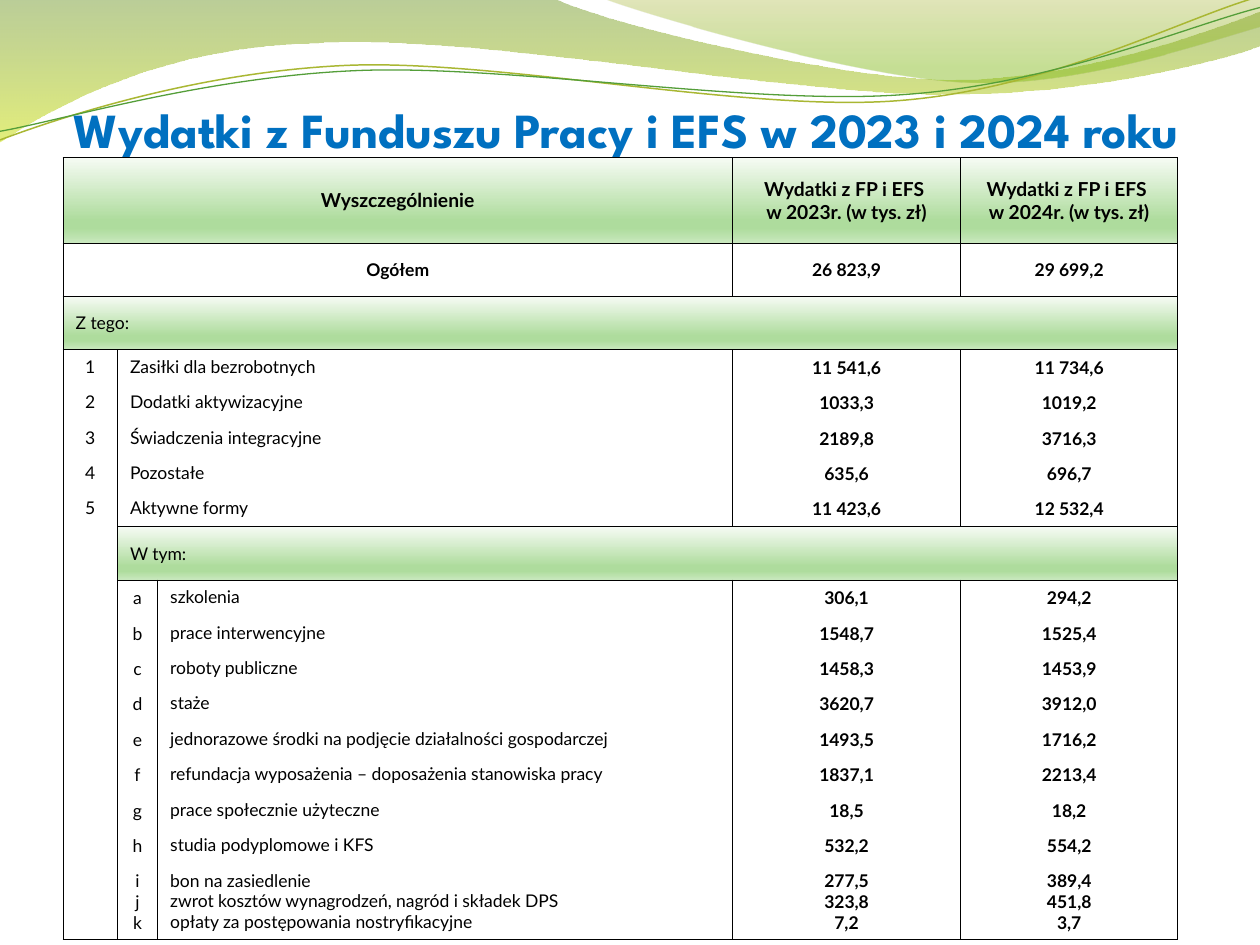
import pptx
import pptx.dml.color
import pptx.enum.text
import pptx.oxml.ns
import pptx.util
from lxml import etree

Pt = pptx.util.Pt
qn = pptx.oxml.ns.qn
ALIGN = pptx.enum.text.PP_ALIGN
ANCHOR = pptx.enum.text.MSO_ANCHOR

COLORS = {
    "title": "0070C0", "text": "000000", "border": "000000",
    "olive": "69921C", "lime": "CCE10F", "moss": "9BAA1A", "leaf": "81BA16",
    "yellow_line": "A9B733", "green_line": "549E39",
    "pale": "F6FBF4", "mid": "AEDC9D", "soft": "C9E8BE",
}
BANNER = [(0, "pale", 100), (74, "mid", 100), (83, "mid", 100), (100, "soft", 100)]
NO_GRID_STYLE = "{2D5ABB26-0587-4C30-8999-92F81FD0307C}"

WAVES = [
    ([(0, "olive", 45), (100, "lime", 55)], [
        [(0, 0)], [(316.8, -0.7)],
        [(342, 12.2), (477.4, 45.4), (545.8, 45.4)],
        [(614.2, 45.4), (689.8, 18.7), (720, 6.5)],
        [(720.7, 25.9)],
        [(707.8, 31.7), (625.7, 54.7), (537.1, 54)],
        [(447.8, 54), (274.3, 20.2), (185, 24.5)],
        [(92.9, 25.9), (33.1, 59.8), (-0.7, 81.4)]]),
    ([(0, "moss", 30), (80, "leaf", 45)], [
        [(344.9, -0.7)],
        [(366.5, 7.9), (491, 44.6), (553, 46.8)],
        [(615.6, 49.7), (691.9, 23), (720, 15.1)],
        [(720, 0)]]),
]
STRAND_ROTATION = 357.3
STRANDS = [
    ("yellow_line", 0.85, [
        [(-1.4, 63)],
        [(33.8, 51.7), (113.3, 29.4), (199.1, 29.8)],
        [(284.9, 30.3), (425, 67.3), (511.6, 64.8)],
        [(599, 62.4), (676.4, 25.7), (719.4, 15.5)]]),
    ("green_line", 0.75, [
        [(-1.1, 58)],
        [(32.9, 53.8), (117.6, 32.5), (204.1, 33)],
        [(289.8, 33.4), (428.9, 63.8), (515.5, 61.4)],
        [(601.3, 59.6), (678.4, 30.1), (721.4, 21.3)]]),
]

COLUMN_WIDTHS = [31.1, 23, 328.5, 130.4, 124]
ROW_HEIGHTS = [48.9] + [30.5] * 2 + [20.25] * 5 + [30.5] + [20.25] * 8 + [43]
MAIN_ITEMS = [
    ("1", "Zasiłki dla bezrobotnych", "11 541,6", "11 734,6"),
    ("2", "Dodatki aktywizacyjne", "1033,3", "1019,2"),
    ("3", "Świadczenia integracyjne", "2189,8", "3716,3"),
    ("4", "Pozostałe", "635,6", "696,7"),
    ("5", "Aktywne formy", "11 423,6", "12 532,4"),
]
ACTIVE_ITEMS = [
    ("a", "szkolenia", "306,1", "294,2"),
    ("b", "prace interwencyjne", "1548,7", "1525,4"),
    ("c", "roboty publiczne", "1458,3", "1453,9"),
    ("d", "staże", "3620,7", "3912,0"),
    ("e", "jednorazowe środki na podjęcie działalności gospodarczej", "1493,5", "1716,2"),
    ("f", "refundacja wyposażenia – doposażenia stanowiska pracy", "1837,1", "2213,4"),
    ("g", "prace społecznie użyteczne", "18,5", "18,2"),
    ("h", "studia podyplomowe i KFS", "532,2", "554,2"),
    ("i\nj\nk",
     "bon na zasiedlenie\nzwrot kosztów wynagrodzeń, nagród i składek DPS\n"
     "opłaty za postępowania nostryfikacyjne",
     "277,5\n323,8\n7,2", "389,4\n451,8\n3,7"),
]


def rgb(name):
    return pptx.dml.color.RGBColor.from_string(COLORS[name])


def fill_gradient(fill, properties, stops):
    fill.background()
    gradient = etree.Element(qn("a:gradFill"), rotWithShape="1")
    stop_list = etree.SubElement(gradient, qn("a:gsLst"))
    for position, name, opacity in stops:
        stop = etree.SubElement(stop_list, qn("a:gs"), pos=str(position * 1000))
        color = etree.SubElement(stop, qn("a:srgbClr"), val=COLORS[name])
        if opacity < 100:
            etree.SubElement(color, qn("a:alpha"), val=str(opacity * 1000))
    etree.SubElement(gradient, qn("a:lin"), ang="5400000", scaled="0")
    properties.replace(properties.find(qn("a:noFill")), gradient)


def style_paragraph(paragraph, font_name, size, color, bold, align):
    paragraph.alignment = align
    paragraph.font.name = font_name
    paragraph.font.size = Pt(size)
    paragraph.font.bold = bold
    paragraph.font.color.rgb = rgb(color)


def add_outline(slide, left, top, segments, close):
    placed = [[(Pt(left + x), Pt(top + y)) for x, y in segment] for segment in segments]
    ends = [segment[-1] for segment in placed]
    builder = slide.shapes.build_freeform(*ends[0], scale=1.0)
    builder.add_line_segments(ends[1:], close=close)
    shape = builder.convert_to_shape()
    shape.shadow.inherit = False
    lines = list(shape._element.iter(qn("a:lnTo")))
    for line, segment in zip(lines, placed[1:]):
        if len(segment) == 3:
            curve = etree.Element(qn("a:cubicBezTo"))
            for x, y in segment:
                etree.SubElement(curve, qn("a:pt"), x=str(x - shape.left), y=str(y - shape.top))
            line.getparent().replace(line, curve)
    return shape


def add_waves(slide, left, top):
    for stops, segments in WAVES:
        shape = add_outline(slide, left, top, segments, True)
        fill_gradient(shape.fill, shape._element.spPr, stops)
        shape.line.fill.background()
    for color, width, segments in STRANDS:
        shape = add_outline(slide, left, top, segments, False)
        shape.rotation = STRAND_ROTATION
        shape.fill.background()
        shape.line.color.rgb = rgb(color)
        shape.line.width = Pt(width)


def add_title(slide, left, top, width, height):
    box = slide.shapes.add_textbox(Pt(left), Pt(top), Pt(width), Pt(height))
    frame = box.text_frame
    frame.word_wrap = True
    frame.vertical_anchor = ANCHOR.BOTTOM
    frame.margin_left = frame.margin_right = frame.margin_bottom = 0
    frame.text = "Wydatki z Funduszu Pracy i EFS w 2023 i 2024 roku"
    style_paragraph(frame.paragraphs[0], "League Spartan", 28, "title", True, ALIGN.CENTER)


def add_borders(cell, sides):
    properties = cell._tc.get_or_add_tcPr()
    for side in "LRTB":
        line = etree.SubElement(properties, qn("a:ln" + side), w=str(Pt(0.5)))
        if side in sides:
            solid = etree.SubElement(line, qn("a:solidFill"))
            etree.SubElement(solid, qn("a:srgbClr"), val=COLORS["border"])
        else:
            etree.SubElement(line, qn("a:noFill"))


def put(table, row, column, text, sides="LRTB", columns=1, rows=1, size=10,
        bold=False, align=ALIGN.CENTER, anchor=ANCHOR.MIDDLE, banner=False):
    cell = table.cell(row, column)
    if columns * rows > 1:
        cell.merge(table.cell(row + rows - 1, column + columns - 1))
    for i in range(row, row + rows):
        for j in range(column, column + columns):
            add_borders(table.cell(i, j), sides)
    if banner:
        fill_gradient(cell.fill, cell._tc.tcPr, BANNER)
    else:
        cell.fill.background()
    cell.vertical_anchor = anchor
    if text:
        cell.text = text
        for paragraph in cell.text_frame.paragraphs:
            style_paragraph(paragraph, "Lato", size, "text", bold, align)


def put_items(table, first_row, items, key_column, key_anchor):
    for index, (key, name, *amounts) in enumerate(items):
        row = first_row + index
        top = "T" if index == 0 else ""
        sides = "LR" + top + ("B" if index == len(items) - 1 else "")
        key_sides = "LR" + top if key_column == 0 else sides
        put(table, row, key_column, key, key_sides, anchor=key_anchor)
        put(table, row, key_column + 1, name, sides, columns=2 - key_column,
            align=ALIGN.LEFT, anchor=ANCHOR.TOP)
        for column, amount in enumerate(amounts, 3):
            put(table, row, column, amount, sides, bold=True)


def add_spending_table(slide, left, top):
    frame = slide.shapes.add_table(len(ROW_HEIGHTS), len(COLUMN_WIDTHS), Pt(left), Pt(top),
                                   Pt(sum(COLUMN_WIDTHS)), Pt(sum(ROW_HEIGHTS)))
    table = frame.table
    table.first_row = table.horz_banding = False
    table._tbl.tblPr.find(qn("a:tableStyleId")).text = NO_GRID_STYLE
    for column, width in zip(table.columns, COLUMN_WIDTHS):
        column.width = Pt(width)
    for row, height in zip(table.rows, ROW_HEIGHTS):
        row.height = Pt(height)

    put(table, 0, 0, "Wyszczególnienie", columns=3, size=11, bold=True, banner=True)
    put(table, 1, 0, "Ogółem", columns=3, bold=True)
    for column, year, total in ((3, 2023, "26 823,9"), (4, 2024, "29 699,2")):
        put(table, 0, column, f"Wydatki z FP i EFS \nw {year}r. (w tys. zł)",
            size=11, bold=True, banner=True)
        put(table, 1, column, total, bold=True)
    put(table, 2, 0, "Z tego:", columns=5, align=ALIGN.LEFT, banner=True)
    put_items(table, 3, MAIN_ITEMS, 0, ANCHOR.TOP)
    put(table, 8, 0, "", "LRB", rows=10)
    put(table, 8, 1, "W tym:", columns=4, align=ALIGN.LEFT, banner=True)
    put_items(table, 9, ACTIVE_ITEMS, 1, ANCHOR.MIDDLE)

    for cell in table.iter_cells():
        if not cell.text:
            etree.SubElement(cell.text_frame.paragraphs[0]._p, qn("a:endParaRPr"), sz="1000")


def main():
    presentation = pptx.Presentation()
    presentation.slide_width, presentation.slide_height = Pt(720), Pt(540)
    slide = presentation.slides.add_slide(presentation.slide_layouts[6])
    add_waves(slide, 0, 0)
    add_title(slide, 23.8, 0.7, 668, 90)
    add_spending_table(slide, 36, 90)
    presentation.save("out.pptx")


if __name__ == "__main__":
    main()
